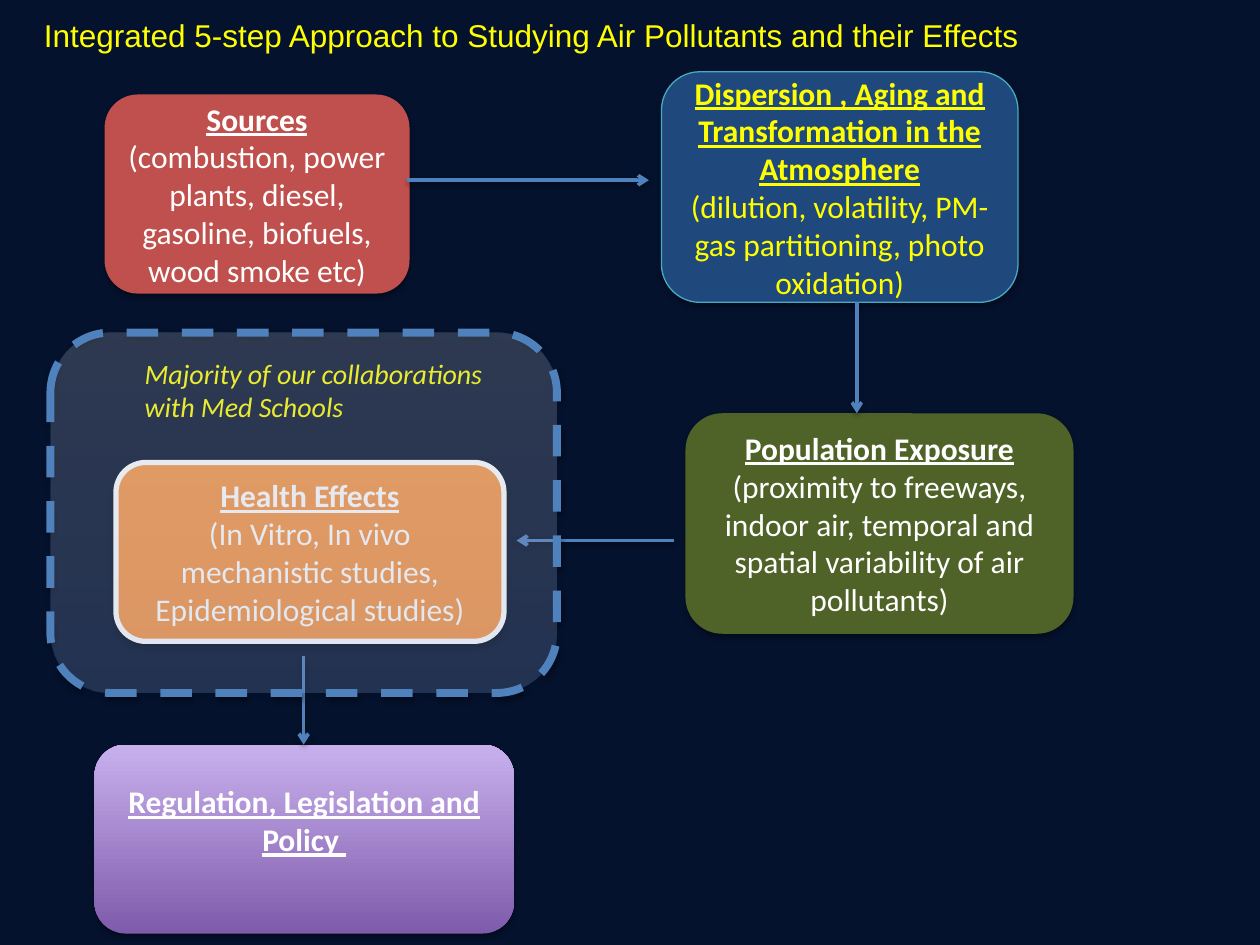
from dataclasses import dataclass
from typing import NamedTuple, Optional

from lxml.etree import SubElement
from pptx import Presentation
from pptx.dml.color import RGBColor
from pptx.enum.dml import MSO_LINE
from pptx.enum.shapes import MSO_CONNECTOR, MSO_SHAPE
from pptx.enum.text import MSO_ANCHOR, MSO_AUTO_SIZE, PP_ALIGN
from pptx.oxml.ns import qn
from pptx.util import Inches, Pt

NAVY = RGBColor(0x05, 0x12, 0x2D)
YELLOW = RGBColor(0xFF, 0xFF, 0x00)
WHITE = RGBColor(0xFF, 0xFF, 0xFF)
BLACK = RGBColor(0x00, 0x00, 0x00)
RED = RGBColor(0xC0, 0x50, 0x4D)
DARK_BLUE = RGBColor(0x1F, 0x49, 0x7D)
TEAL = RGBColor(0x46, 0xAA, 0xC5)
OLIVE = RGBColor(0x4F, 0x62, 0x28)
ORANGE = RGBColor(0xF7, 0x96, 0x46)
BLUE = RGBColor(0x4F, 0x81, 0xBD)
PURPLE = RGBColor(0x7F, 0x5B, 0xAB)
LILAC = RGBColor(0xC8, 0xB0, 0xED)
SKY = RGBColor(0xA4, 0xC4, 0xFF)
PALE_SKY = RGBColor(0xBF, 0xD4, 0xFF)
ICE = RGBColor(0xE6, 0xEE, 0xFF)


class Area(NamedTuple):
    left: float
    top: float
    width: float
    height: float


class Stop(NamedTuple):
    position: int
    color: RGBColor
    opacity: int = 100


class Arrow(NamedTuple):
    x1: float
    y1: float
    x2: float
    y2: float


@dataclass
class Step:
    area: Area
    heading: str
    detail: str = ""
    fill: Optional[RGBColor] = None
    gradient: tuple[Stop, ...] = ()
    border: Optional[RGBColor] = None
    border_width: float = 0.75
    text_color: RGBColor = WHITE
    same_paragraph: bool = False
    bottom_inset: float = 0.05


STEPS = [
    Step(Area(0.83, 0.75, 2.42, 1.58), "Sources",
         "(combustion, power plants, diesel, gasoline, biofuels, wood smoke etc)",
         fill=RED),
    Step(Area(5.25, 0.57, 2.83, 1.83),
         "Dispersion , Aging and Transformation in the Atmosphere",
         "(dilution, volatility, PM-gas partitioning, photo oxidation)",
         fill=DARK_BLUE, border=TEAL, text_color=YELLOW),
    Step(Area(5.44, 3.28, 3.08, 1.75), "Population Exposure ",
         "(proximity to freeways, indoor air, temporal and spatial variability "
         "of air pollutants)",
         fill=OLIVE, same_paragraph=True),
    Step(Area(0.92, 3.67, 3.08, 1.42), "Health Effects",
         "(In Vitro, In vivo mechanistic studies, Epidemiological studies)",
         fill=ORANGE, border=WHITE, border_width=3),
    Step(Area(0.75, 5.91, 3.33, 1.5), "Regulation, Legislation and Policy ",
         gradient=(Stop(0, PURPLE), Stop(100, LILAC)), bottom_inset=0.35),
]

ARROWS = [
    Arrow(3.23, 1.43, 5.15, 1.43),
    Arrow(6.8, 2.4, 6.8, 3.28),
    Arrow(5.35, 4.29, 4.1, 4.29),
    Arrow(2.41, 5.21, 2.41, 5.91),
]

COLLABORATION_STOPS = (Stop(0, SKY, 18), Stop(35, PALE_SKY, 18), Stop(100, ICE, 18))


def add_color(parent, color: RGBColor, opacity: int) -> None:
    element = SubElement(parent, qn("a:srgbClr"), val=str(color))
    if opacity < 100:
        SubElement(element, qn("a:alpha"), val=str(opacity * 1000))


def add_shadow(properties, opacity: int, distance: float) -> None:
    """Give a shape or connector a soft shadow straight below it."""
    effects = properties.find(qn("a:effectLst"))
    if effects is None:
        effects = SubElement(properties, qn("a:effectLst"))
    shadow = SubElement(effects, qn("a:outerShdw"), blurRad=str(Pt(3.1)),
                        dist=str(Pt(distance)), dir="5400000", rotWithShape="0")
    add_color(shadow, BLACK, opacity)


def fill_gradient(shape, stops: tuple[Stop, ...]) -> None:
    """Fill from bottom to top."""
    shape.fill.gradient()
    shape.fill.gradient_angle = 90
    stop_list = shape._element.spPr.find(qn("a:gradFill")).find(qn("a:gsLst"))
    for default_stop in list(stop_list):
        stop_list.remove(default_stop)
    for stop in stops:
        element = SubElement(stop_list, qn("a:gs"), pos=str(stop.position * 1000))
        add_color(element, stop.color, stop.opacity)


def add_run(paragraph, text: str, *, color: RGBColor, size: float = 18,
            font: str = "Calibri", bold: bool = False, italic: bool = False,
            underline: bool = False) -> None:
    run = paragraph.add_run()
    run.text = text
    run.font.name = font
    run.font.size = Pt(size)
    run.font.color.rgb = color
    run.font.bold = bold
    run.font.italic = italic
    run.font.underline = underline


def add_label(slide, area: Area, text: str, **run_format) -> None:
    label = slide.shapes.add_textbox(*map(Inches, area))
    label.text_frame.word_wrap = True
    label.text_frame.auto_size = MSO_AUTO_SIZE.SHAPE_TO_FIT_TEXT
    add_run(label.text_frame.paragraphs[0], text, **run_format)


def add_rounded_box(slide, area: Area, *, fill: Optional[RGBColor] = None,
                    gradient: tuple[Stop, ...] = (),
                    border: Optional[RGBColor] = None, border_width: float = 0.75,
                    shadow_opacity: int = 35, shadow_distance: float = 1.8):
    box = slide.shapes.add_shape(MSO_SHAPE.ROUNDED_RECTANGLE, *map(Inches, area))
    if gradient:
        fill_gradient(box, gradient)
    else:
        box.fill.solid()
        box.fill.fore_color.rgb = fill
    if border is None:
        box.line.fill.background()
    else:
        box.line.color.rgb = border
        box.line.width = Pt(border_width)
    box.shadow.inherit = False
    add_shadow(box._element.spPr, shadow_opacity, shadow_distance)
    return box


def add_step(slide, step: Step) -> None:
    box = add_rounded_box(slide, step.area, fill=step.fill, gradient=step.gradient,
                          border=step.border, border_width=step.border_width)
    frame = box.text_frame
    frame.word_wrap = True
    frame.vertical_anchor = MSO_ANCHOR.MIDDLE
    frame.margin_bottom = Inches(step.bottom_inset)
    paragraph = frame.paragraphs[0]
    paragraph.alignment = PP_ALIGN.CENTER
    add_run(paragraph, step.heading, color=step.text_color, bold=True, underline=True)
    if step.detail:
        if not step.same_paragraph:
            paragraph = frame.add_paragraph()
            paragraph.alignment = PP_ALIGN.CENTER
        add_run(paragraph, step.detail, color=step.text_color)


def add_arrow(slide, arrow: Arrow) -> None:
    connector = slide.shapes.add_connector(MSO_CONNECTOR.STRAIGHT, *map(Inches, arrow))
    connector.line.color.rgb = BLUE
    connector.line.width = Pt(2)
    properties = connector._element.spPr
    SubElement(properties.find(qn("a:ln")), qn("a:tailEnd"), type="arrow")
    add_shadow(properties, 38, 1.6)


def main() -> None:
    deck = Presentation()
    deck.slide_width, deck.slide_height = Inches(10), Inches(7.5)
    slide = deck.slides.add_slide(deck.slide_layouts[6])
    slide.background.fill.solid()
    slide.background.fill.fore_color.rgb = NAVY

    add_label(slide, Area(0.25, 0.08, 8.67, 0.4),
              "Integrated 5-step Approach to Studying Air Pollutants and their Effects",
              color=YELLOW, font="Arial")
    for step in STEPS:
        add_step(slide, step)
    for arrow in ARROWS:
        add_arrow(slide, arrow)
    add_label(slide, Area(1.05, 2.78, 3.14, 0.64),
              "Majority of our collaborations with Med Schools",
              color=YELLOW, size=16, italic=True)
    collaboration = add_rounded_box(slide, Area(0.4, 2.64, 4.02, 2.86),
                                    gradient=COLLABORATION_STOPS, border=BLUE,
                                    border_width=4.5, shadow_opacity=38,
                                    shadow_distance=1.6)
    collaboration.line.dash_style = MSO_LINE.DASH
    deck.save("out.pptx")


if __name__ == "__main__":
    main()
